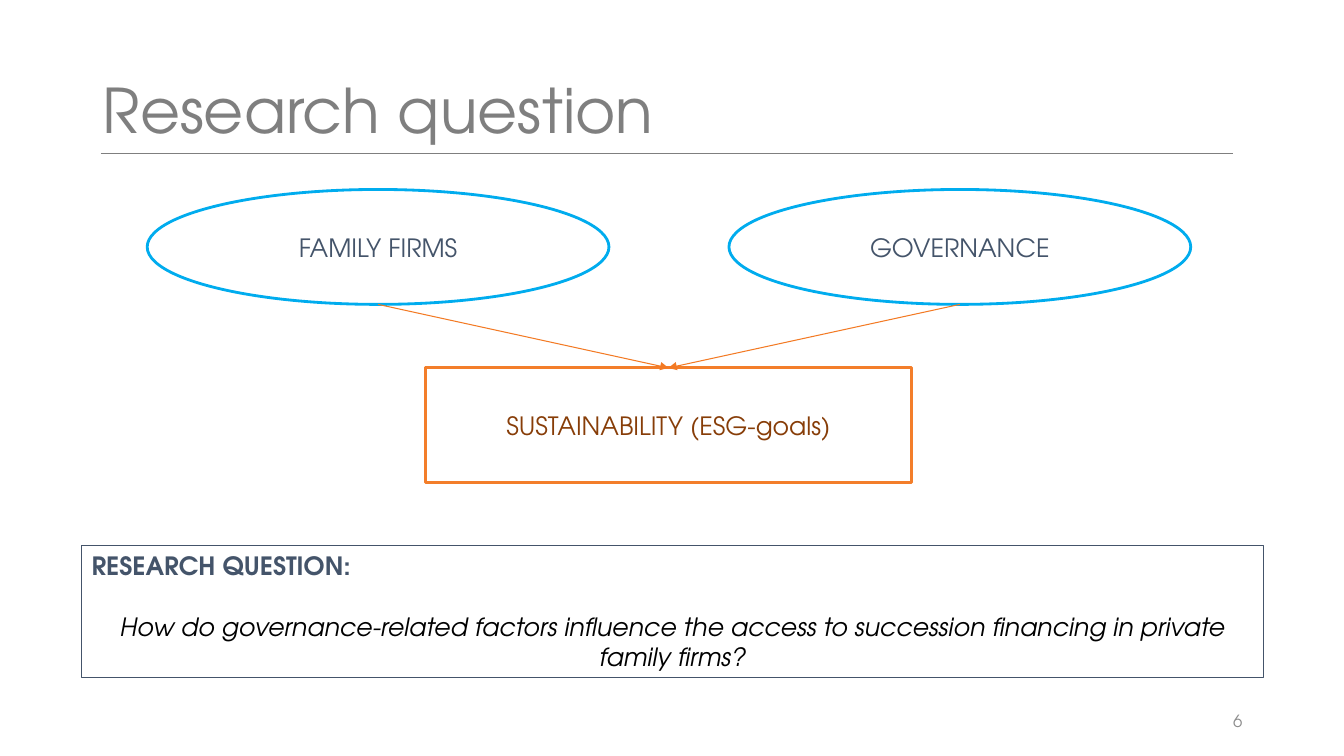
import dataclasses

import pptx
import pptx.dml.color
import pptx.enum.shapes
import pptx.enum.text
import pptx.oxml
import pptx.oxml.ns
import pptx.util

PX = 9144
SHAPE = pptx.enum.shapes.MSO_SHAPE
ALIGN = pptx.enum.text.PP_ALIGN
ANCHOR = pptx.enum.text.MSO_ANCHOR


@dataclasses.dataclass(frozen=True)
class Theme:
    """Colours, type sizes and line widths of the slide."""
    font: str = "TeX Gyre Adventor"
    title: str = "7F7F7F"
    number: str = "8C8C8C"
    paper: str = "FFFFFF"
    ink: str = "000000"
    navy: str = "44546A"
    blue: str = "00ACEE"
    orange: str = "F37E2A"
    arrow: str = "F37A24"
    brown: str = "873D08"
    title_size: int = 44
    body_size: int = 18
    number_size: int = 12
    thick: float = 2
    thin: float = 0.75


THEME = Theme()


def rgb(value):
    """Return a colour object for a hex string."""
    return pptx.dml.color.RGBColor.from_string(value)


def emu(*lengths):
    """Turn px lengths into EMU."""
    return [pptx.util.Emu(length * PX) for length in lengths]


def style(p, text, color, size, align=ALIGN.LEFT):
    """Fill a paragraph with text in one style."""
    p.text = text
    p.alignment = align
    p.font.name = THEME.font
    p.font.size = pptx.util.Pt(size)
    p.font.color.rgb = rgb(color)
    return p


def add_text(s, box, text, color, size, align=ALIGN.LEFT):
    """Add a vertically centred text box and return its paragraph."""
    tf = s.shapes.add_textbox(*emu(*box)).text_frame
    tf.word_wrap = True
    tf.vertical_anchor = ANCHOR.MIDDLE
    return style(tf.paragraphs[0], text, color, size, align)


def add_outlined(s, kind, box, color, width):
    """Add an outlined shape with wrapping text."""
    sp = s.shapes.add_shape(kind, *emu(*box))
    sp.shadow.inherit = False
    sp.line.color.rgb = rgb(color)
    sp.line.width = pptx.util.Pt(width)
    sp.text_frame.word_wrap = True
    return sp


def add_node(s, kind, box, text, color, line):
    """Add one concept of the diagram."""
    sp = add_outlined(s, kind, box, line, THEME.thick)
    sp.fill.solid()
    sp.fill.fore_color.rgb = rgb(THEME.paper)
    sp.text_frame.vertical_anchor = ANCHOR.MIDDLE
    style(sp.text_frame.paragraphs[0], text, color, THEME.body_size, ALIGN.CENTER)


def add_line(s, start, end, color):
    """Add a thin straight line without shadow and return its properties."""
    line = s.shapes.add_connector(
        pptx.enum.shapes.MSO_CONNECTOR.STRAIGHT, *emu(*start, *end))
    line.line.color.rgb = rgb(color)
    line.line.width = pptx.util.Pt(THEME.thin)
    props = line.element.find(pptx.oxml.ns.qn("p:spPr"))
    props.append(pptx.oxml.parse_xml(
        f'<a:effectLst {pptx.oxml.ns.nsdecls("a")}/>'))
    return props


def add_arrow(s, start, end):
    """Add a line with a triangular head at its end."""
    props = add_line(s, start, end, THEME.arrow)
    props.find(pptx.oxml.ns.qn("a:ln")).append(pptx.oxml.parse_xml(
        f'<a:tailEnd {pptx.oxml.ns.nsdecls("a")} type="triangle"/>'))


def add_header(s, box):
    """Place the title and the rule below it."""
    left, top, width, height = box
    p = add_text(s, box, "Research question", THEME.title, THEME.title_size)
    p.line_spacing = 0.9
    add_line(s, (left + 8, top + 112), (left + width - 19, top + 112), THEME.title)


def add_diagram(s, box):
    """Place two causes above the goal they lead to."""
    left, top, width, height = box
    oval, goal_width, node_height = 458, 482, 114
    middle, goal_top = left + width // 2, top + height - node_height
    causes = {"FAMILY FIRMS": left, "GOVERNANCE": left + width - oval}
    for text, x in causes.items():
        add_node(s, SHAPE.OVAL, (x, top, oval, node_height), text,
                 THEME.navy, THEME.blue)
    add_node(s, SHAPE.RECTANGLE,
             (middle - goal_width // 2, goal_top, goal_width, node_height),
             "SUSTAINABILITY (ESG-goals)", THEME.brown, THEME.orange)
    for x in causes.values():
        add_arrow(s, (x + oval // 2, top + node_height), (middle, goal_top))


def add_question(s, box):
    """Place the framed research question."""
    sp = add_outlined(s, SHAPE.RECTANGLE, box, THEME.navy, THEME.thin)
    sp.fill.background()
    tf = sp.text_frame
    tf.vertical_anchor = ANCHOR.TOP
    p = style(tf.paragraphs[0], "RESEARCH QUESTION:", THEME.navy, THEME.body_size)
    p.font.bold = True
    p = style(tf.add_paragraph(),
              "How do governance-related factors influence the access to "
              "succession financing in private family firms?",
              THEME.ink, THEME.body_size, ALIGN.CENTER)
    p.font.italic = True
    p.space_before = pptx.util.Pt(22)


def main():
    """Build and save the slide."""
    prs = pptx.Presentation()
    prs.slide_width, prs.slide_height = emu(1333, 750)
    s = prs.slides.add_slide(prs.slide_layouts[6])
    add_header(s, (92, 40, 1150, 145))
    add_diagram(s, (146, 188, 1035, 291))
    add_question(s, (81, 541, 1172, 131))
    add_text(s, (942, 695, 300, 40), "6", THEME.number, THEME.number_size,
             ALIGN.RIGHT)
    prs.save("out.pptx")


if __name__ == "__main__":
    main()
